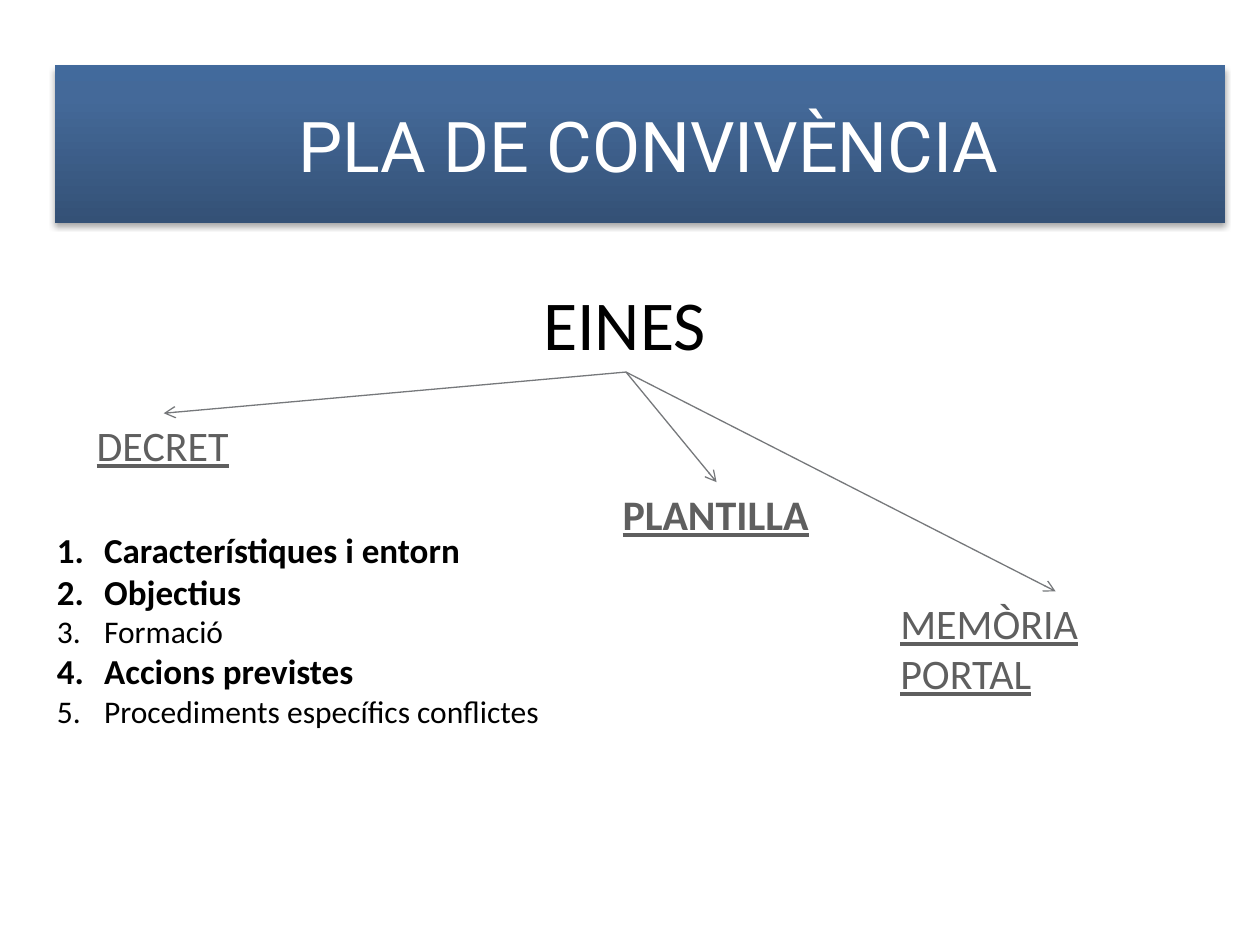
from lxml.etree import SubElement
from pptx import Presentation
from pptx.dml.color import RGBColor
from pptx.enum.shapes import MSO_CONNECTOR
from pptx.enum.text import MSO_ANCHOR, MSO_AUTO_SIZE, PP_ALIGN
from pptx.oxml import parse_xml
from pptx.oxml.ns import nsdecls, qn
from pptx.util import Cm, Pt

COLORS = {
    "banner_bottom": "345176",
    "banner_middle": "446999",
    "banner_top": "426A9C",
    "white": "FFFFFF",
    "black": "000000",
    "tool": "5F5F5F",
    "arrow": "76787B",
}
INDENT = Cm(0.95)

# Text, left, top, width (cm), bold
TOOLS = [
    ("DECRET", 1.7, 8.33, 3.2, False),
    ("PLANTILLA", 12.3, 9.72, 4.29, True),
    ("MEMÒRIA PORTAL", 17.9, 11.92, 6.76, False),
]
# Text, highlighted
SECTIONS = [
    ("Característiques i entorn", True),
    ("Objectius", True),
    ("Formació", False),
    ("Accions previstes", True),
    ("Procediments específics conflictes", False),
]


def set_font(paragraph, size, color, name="Calibri", bold=False, underline=False):
    font = paragraph.font
    font.name = name
    font.size = Pt(size)
    font.bold = bold
    font.underline = underline
    font.color.rgb = RGBColor.from_string(COLORS[color])


def add_banner(slide, text):
    banner = slide.shapes.title
    banner.left, banner.top, banner.width, banner.height = Cm(1.1), Cm(1.32), Cm(23.6), Cm(3.18)
    banner.text_frame.text = text
    banner.text_frame.vertical_anchor = MSO_ANCHOR.MIDDLE
    paragraph = banner.text_frame.paragraphs[0]
    paragraph.alignment = PP_ALIGN.CENTER
    set_font(paragraph, 40, "white", name="Roboto")

    # Vertical gradient and soft shadow below
    stops = [(0, "banner_bottom"), (80, "banner_middle"), (100, "banner_top")]
    stop_xml = "".join(
        f'<a:gs pos="{percent * 1000}"><a:srgbClr val="{COLORS[color]}"/></a:gs>'
        for percent, color in stops
    )
    properties = banner.element.spPr
    properties.append(parse_xml(
        f'<a:gradFill {nsdecls("a")} rotWithShape="1"><a:gsLst>{stop_xml}</a:gsLst>'
        '<a:lin ang="16200000" scaled="0"/></a:gradFill>'
    ))
    properties.append(parse_xml(
        f'<a:effectLst {nsdecls("a")}>'
        f'<a:outerShdw blurRad="{Pt(3.1)}" dist="{Pt(1.8)}" dir="5400000" rotWithShape="0">'
        f'<a:srgbClr val="{COLORS["black"]}"><a:alpha val="35000"/></a:srgbClr>'
        '</a:outerShdw></a:effectLst>'
    ))


def add_text_box(slide, left, top, width, height):
    box = slide.shapes.add_textbox(Cm(left), Cm(top), Cm(width), Cm(height))
    box.text_frame.word_wrap = False
    box.text_frame.auto_size = MSO_AUTO_SIZE.SHAPE_TO_FIT_TEXT
    return box


def add_label(slide, text, bounds, size, color, bold=False, underline=False):
    label = add_text_box(slide, *bounds)
    label.text_frame.text = text
    set_font(label.text_frame.paragraphs[0], size, color, bold=bold, underline=underline)
    return label


def add_numbered_list(slide, items, bounds):
    frame = add_text_box(slide, *bounds).text_frame
    frame.text = "\n".join(text for text, _ in items)
    for paragraph, (_, highlighted) in zip(frame.paragraphs, items):
        set_font(paragraph, 20 if highlighted else 18, "black", bold=highlighted)
        properties = paragraph._p.get_or_add_pPr()
        properties.set("marL", str(INDENT))
        properties.set("indent", str(-INDENT))
        numbering = properties.makeelement(qn("a:buAutoNum"), {"type": "arabicPeriod"})
        properties.insert(0, numbering)


def add_arrow(slide, source, target):
    """Join the bottom centre of source to the top centre of target."""
    arrow = slide.shapes.add_connector(
        MSO_CONNECTOR.STRAIGHT,
        source.left + source.width // 2, source.top + source.height,
        target.left + target.width // 2, target.top,
    )
    arrow.line.color.rgb = RGBColor.from_string(COLORS["arrow"])
    arrow.line.width = Pt(0.75)
    SubElement(arrow.line._get_or_add_ln(), qn("a:tailEnd"), type="arrow")
    SubElement(arrow.element.spPr, qn("a:effectLst"))


def main():
    presentation = Presentation()
    presentation.slide_width, presentation.slide_height = Cm(25.4), Cm(19.05)
    slide = presentation.slides.add_slide(presentation.slide_layouts[5])

    add_banner(slide, " PLA DE CONVIVÈNCIA")

    # Heading and the three tools
    heading = add_label(slide, "EINES", (10.7, 5.54, 3.84, 1.96), 40, "black")
    tools = [
        add_label(slide, text, (left, top, width, 1.27), 24, "tool", bold, underline=True)
        for text, left, top, width, bold in TOOLS
    ]

    # Contents of the decree
    add_numbered_list(slide, SECTIONS, (0.9, 10.52, 10.34, 4.37))

    # Arrows from the heading to each tool
    for tool in tools:
        add_arrow(slide, heading, tool)

    presentation.save("out.pptx")


if __name__ == "__main__":
    main()
